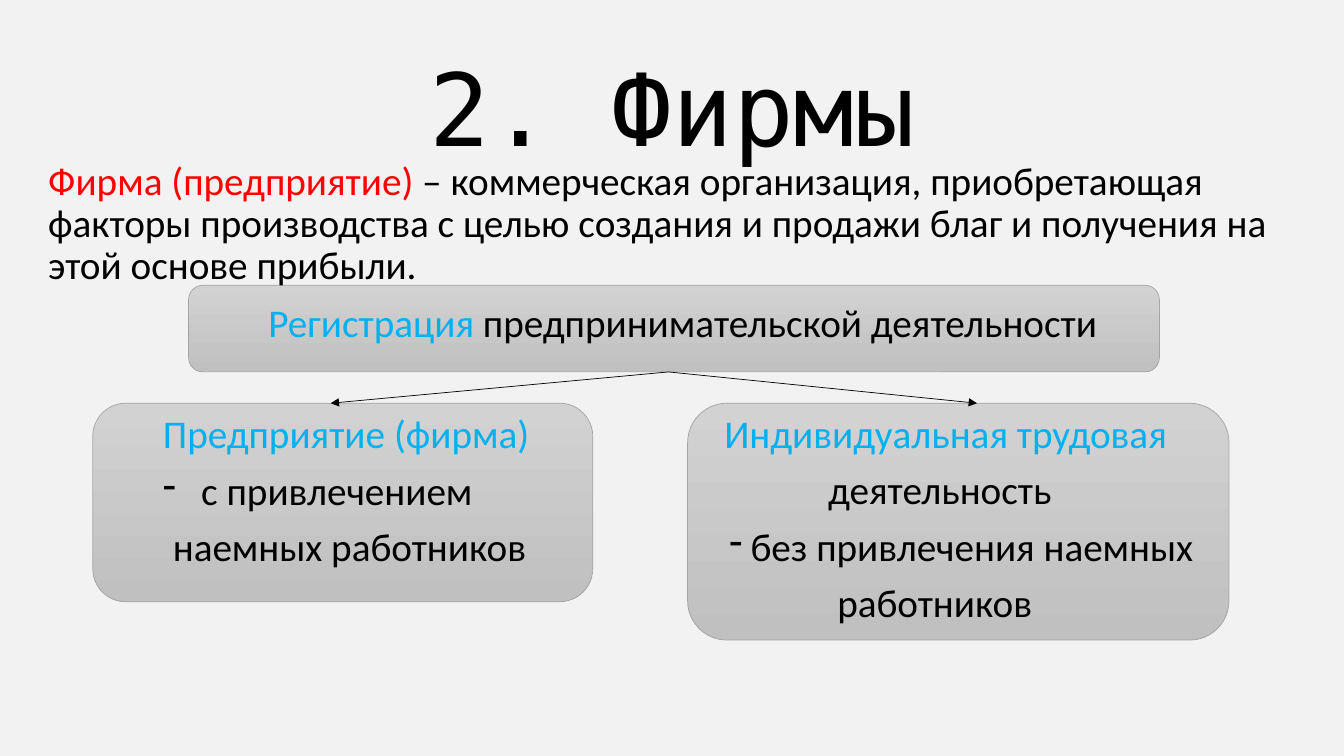
from dataclasses import dataclass
from typing import NamedTuple

from pptx import Presentation
from pptx.dml.color import RGBColor
from pptx.enum.shapes import MSO_CONNECTOR, MSO_SHAPE
from pptx.enum.text import MSO_ANCHOR, PP_ALIGN
from pptx.oxml.ns import qn
from pptx.slide import Slide
from pptx.text.text import TextFrame
from pptx.util import Inches, Pt
from lxml.etree import SubElement


@dataclass(frozen=True)
class Theme:
    background: str = "F2F2F2"
    ink: str = "000000"
    term: str = "FF0000"
    accent: str = "00B0F0"
    panel_top: str = "D2D2D2"
    panel_bottom: str = "C0C0C0"
    panel_edge: str = "A5A5A5"
    title_font: str = "DejaVu Sans Mono"
    body_font: str = "Calibri"
    title_size: int = 72
    body_size: int = 28
    edge_width: float = 0.5


THEME = Theme()


class Span(NamedTuple):
    text: str
    color: str = THEME.ink
    font: str = THEME.body_font
    size: int = THEME.body_size


class Line(NamedTuple):
    spans: list[Span]
    margin: float = 0
    hang: float = 0
    align: PP_ALIGN = PP_ALIGN.LEFT


class Box(NamedTuple):
    left: float
    top: float
    width: float
    height: float


class Panel(NamedTuple):
    box: Box
    lines: list[Line]
    inset_left: float = 0
    inset_top: float = 0


def rgb(color: str) -> RGBColor:
    return RGBColor.from_string(color)


def write_lines(frame: TextFrame, lines: list[Line]) -> None:
    frame.word_wrap = True
    for index, line in enumerate(lines):
        paragraph = frame.paragraphs[0] if index == 0 else frame.add_paragraph()
        paragraph.alignment = line.align
        paragraph.line_spacing = 0.9
        paragraph.space_before = Pt(10)
        properties = paragraph._p.get_or_add_pPr()
        properties.set("marL", str(Inches(line.margin)))
        properties.set("indent", str(Inches(-line.hang)))
        if line.hang:
            SubElement(properties, qn("a:buChar")).set("char", "-")
        for span in line.spans:
            run = paragraph.add_run()
            run.text = span.text
            run.font.name = span.font
            run.font.size = Pt(span.size)
            run.font.color.rgb = rgb(span.color)


def add_text(slide: Slide, box: Box, line: Line, anchor: MSO_ANCHOR) -> None:
    frame = slide.shapes.add_textbox(*map(Inches, box)).text_frame
    frame.vertical_anchor = anchor
    write_lines(frame, [line])


def add_panel(slide: Slide, panel: Panel) -> None:
    shape = slide.shapes.add_shape(MSO_SHAPE.ROUNDED_RECTANGLE, *map(Inches, panel.box))
    shape.shadow.inherit = False
    shape.fill.gradient()
    shape.fill.gradient_angle = 270
    for stop, color in zip(shape.fill.gradient_stops, (THEME.panel_top, THEME.panel_bottom)):
        stop.color.rgb = rgb(color)
    shape.line.color.rgb = rgb(THEME.panel_edge)
    shape.line.width = Pt(THEME.edge_width)
    frame = shape.text_frame
    frame.vertical_anchor = MSO_ANCHOR.TOP
    frame.margin_left = Inches(panel.inset_left)
    frame.margin_top = Inches(panel.inset_top)
    frame.margin_right = frame.margin_bottom = 0
    write_lines(frame, panel.lines)


def add_arrow(slide: Slide, start: tuple[float, float], end: tuple[float, float]) -> None:
    arrow = slide.shapes.add_connector(MSO_CONNECTOR.STRAIGHT, *map(Inches, start + end))
    arrow.line.color.rgb = rgb(THEME.ink)
    arrow.line.width = Pt(THEME.edge_width)
    SubElement(arrow.line._get_or_add_ln(), qn("a:tailEnd")).set("type", "triangle")
    SubElement(arrow._element.spPr, qn("a:effectLst"))


TITLE = Line([Span("2. Фирмы", font=THEME.title_font, size=THEME.title_size)], align=PP_ALIGN.CENTER)

DEFINITION = Line([
    Span("Фирма (предприятие) ", THEME.term),
    Span("– коммерческая организация, приобретающая факторы производства с целью "
         "создания и продажи благ и получения на этой основе прибыли."),
])

REGISTRATION = Panel(
    Box(1.87, 2.83, 9.63, 0.86),
    [Line([Span("Регистрация", THEME.accent), Span(" предпринимательской деятельности")],
          align=PP_ALIGN.CENTER)],
    inset_left=0.17,
    inset_top=0.14,
)

ENTERPRISE = Panel(
    Box(0.92, 4, 4.96, 1.97),
    [
        Line([Span("Предприятие (фирма)", THEME.accent)], margin=0.6),
        Line([Span("с привлечением")], margin=0.98, hang=0.38),
        Line([Span("наемных работников")], margin=0.7),
    ],
    inset_top=0.02,
)

SELF_EMPLOYMENT = Panel(
    Box(6.82, 4, 5.37, 2.35),
    [
        Line([Span("Индивидуальная трудовая", THEME.accent)], margin=0.25),
        Line([Span("деятельность")], margin=1.28),
        Line([Span("без привлечения наемных")], margin=0.51, hang=0.21),
        Line([Span("работников")], margin=1.37),
    ],
)

FORK = (6.63, 3.69)
BRANCH_ENDS = [(3.28, 4), (9.69, 4)]


def main() -> None:
    presentation = Presentation()
    presentation.slide_width = Inches(13.33)
    presentation.slide_height = Inches(7.5)
    slide = presentation.slides.add_slide(presentation.slide_layouts[6])
    slide.background.fill.solid()
    slide.background.fill.fore_color.rgb = rgb(THEME.background)

    for panel in (SELF_EMPLOYMENT, ENTERPRISE, REGISTRATION):
        add_panel(slide, panel)
    add_text(slide, Box(0.92, 0.4, 11.5, 1.45), TITLE, MSO_ANCHOR.MIDDLE)
    add_text(slide, Box(0.38, 1.55, 12.79, 1.35), DEFINITION, MSO_ANCHOR.TOP)
    for end in BRANCH_ENDS:
        add_arrow(slide, FORK, end)

    presentation.save("out.pptx")


if __name__ == "__main__":
    main()
